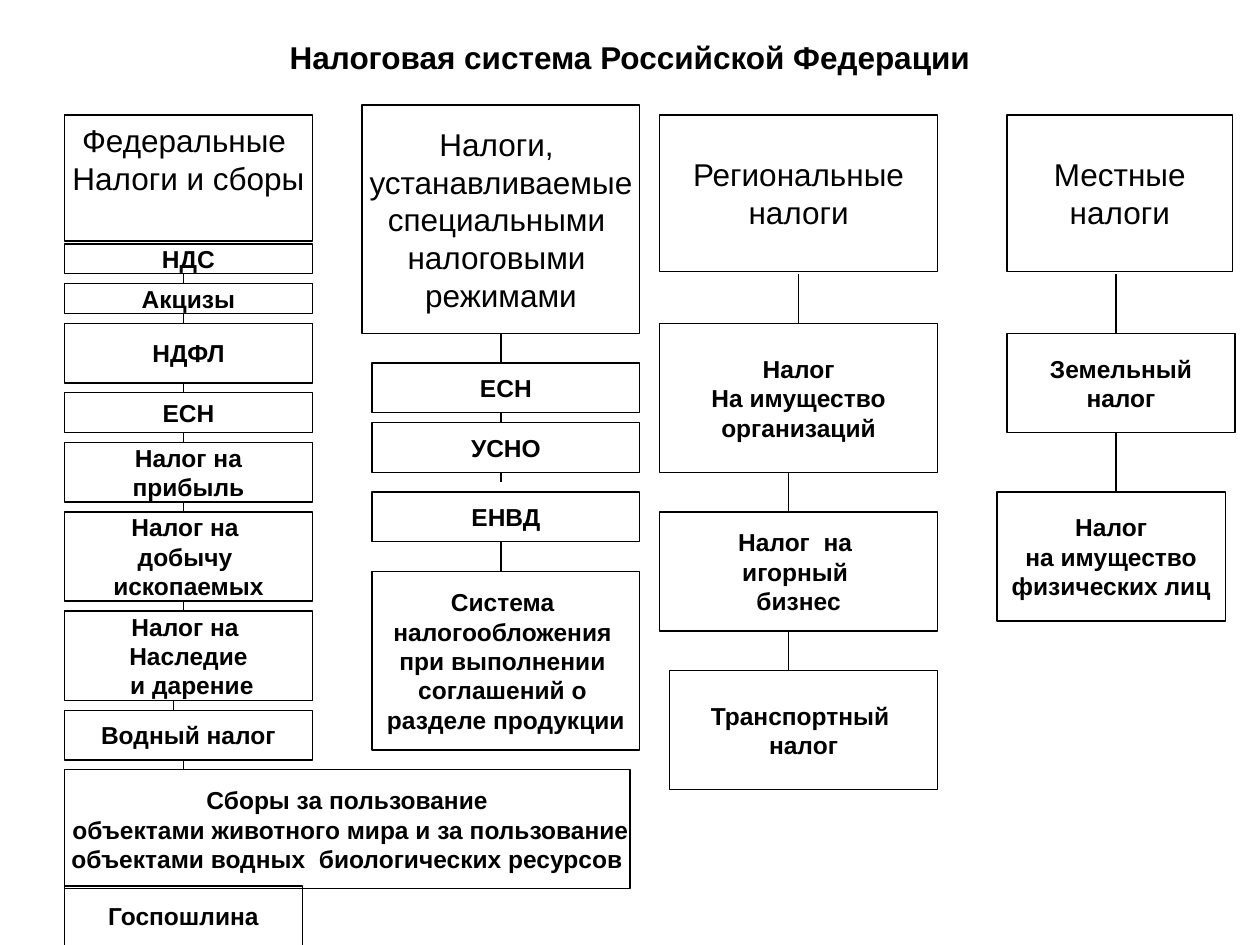
from dataclasses import dataclass

from lxml import etree
from pptx import Presentation
from pptx.dml.color import RGBColor
from pptx.enum.shapes import MSO_CONNECTOR, MSO_SHAPE
from pptx.enum.text import MSO_ANCHOR, PP_ALIGN
from pptx.oxml.ns import qn
from pptx.util import Cm, Pt

BLACK = RGBColor(0, 0, 0)
RECT = MSO_SHAPE.RECTANGLE
LINE = MSO_CONNECTOR.STRAIGHT
CENTER = PP_ALIGN.CENTER
MIDDLE = MSO_ANCHOR.MIDDLE
TOP = MSO_ANCHOR.TOP

BASE = {"name": "Arial"}
TITLE = {**BASE, "size": Pt(18), "bold": True}
HEAD = {**BASE, "size": Pt(18), "bold": False}
ITEM = {**BASE, "size": Pt(14), "bold": True}


@dataclass
class Part:
    text: str
    gap: float
    high: float
    dx: float = 0
    wide: float = 0
    link: float = 0
    start: float = 0
    stop: float = 0


def write(frame, text, style, anchor=MIDDLE):
    frame.text = text
    frame.vertical_anchor = anchor
    for para in frame.paragraphs:
        para.alignment = CENTER
        for run in para.runs:
            run.font.color.rgb = BLACK
            for key, value in style.items():
                setattr(run.font, key, value)


def add_box(slide, box, text, style, anchor=MIDDLE):
    shape = slide.shapes.add_shape(RECT, *map(Cm, box))
    shape.shadow.inherit = False
    shape.fill.background()
    shape.line.color.rgb = BLACK
    shape.line.width = Pt(0.75)
    shape.text_frame.word_wrap = False
    write(shape.text_frame, text, style, anchor)


def add_link(slide, x, top, end):
    line = slide.shapes.add_connector(LINE, Cm(x), Cm(top), Cm(x), Cm(end))
    line.line.color.rgb = BLACK
    line.line.width = Pt(0.75)
    etree.SubElement(line._element.spPr, qn("a:effectLst"))


def add_title(slide, box, text):
    title = slide.shapes.title
    for key, value in zip(("left", "top", "width", "height"), box):
        setattr(title, key, Cm(value))
    write(title.text_frame, text, TITLE)


def add_column(slide, box, head, parts, anchor=MIDDLE):
    left, top, wide, high = box
    add_box(slide, box, head, HEAD, anchor)
    end = top + high
    for part in parts:
        top = end + part.gap
        if part.link:
            add_link(slide, left + part.link, end + part.start, top - part.stop)
        add_box(slide, (left + part.dx, top, part.wide or wide, part.high),
                part.text, ITEM)
        end = top + part.high


FEDERAL = [
    Part("НДС", 0.06, 0.6),
    Part("Акцизы", 0.2, 0.6, link=2.4),
    Part("НДФЛ", 0.2, 1.2, link=2.4),
    Part("ЕСН", 0.2, 0.8, link=2.4),
    Part("Налог на\nприбыль", 0.2, 1.2, link=2.4),
    Part("Налог на \nдобычу \nископаемых", 0.2, 1.8, link=2.4),
    Part("Налог на \nНаследие\n и дарение", 0.2, 1.8, link=2.4),
    Part("Водный налог", 0.2, 1, link=2.2),
    Part("Сборы за пользование\n"
         " объектами животного мира и за пользование\n"
         "объектами водных  биологических ресурсов",
         0.2, 2.4, wide=11.4, link=2.4),
    Part("Госпошлина", -0.06, 1.2, wide=4.8),
]
SPECIAL = [
    Part("ЕСН", 0.6, 1, 0.2, 5.4, 2.8),
    Part("УСНО", 0.2, 1, 0.2, 5.4, 2.8),
    Part("ЕНВД", 0.4, 1, 0.2, 5.4, 2.8, stop=0.2),
    Part("Система \nналогообложения \nпри выполнении \n"
         "соглашений о \nразделе продукции", 0.6, 3.6, 0.2, 5.4, 2.8),
]
REGION = [
    Part("Налог\nНа имущество\nорганизаций", 1.05, 3, link=2.8, start=0.06),
    Part("Налог  на \nигорный \nбизнес", 0.8, 2.4, link=2.6),
    Part("Транспортный \nналог", 0.8, 2.4, 0.2, 5.4, 2.6),
]
LOCAL = [
    Part("Земельный\nналог", 1.25, 2, 0, 4.6, 2.2, start=0.06),
    Part("Налог\nна имущество\nфизических лиц", 1.2, 2.6, -0.2, 4.6, 2.2),
]


def main():
    deck = Presentation()
    deck.slide_width, deck.slide_height = Cm(25.4), Cm(19.05)
    slide = deck.slides.add_slide(deck.slide_layouts[5])
    add_title(slide, (1.27, 0.54, 22.86, 1.2),
              "Налоговая система Российской Федерации")
    add_column(slide, (1.3, 2.32, 5, 2.54),
               "Федеральные \nНалоги и сборы", FEDERAL, TOP)
    add_column(slide, (7.3, 2.12, 5.6, 4.6),
               "Налоги, \nустанавливаемые\nспециальными \nналоговыми \nрежимами",
               SPECIAL)
    add_column(slide, (13.3, 2.32, 5.6, 3.15), "Региональные\nналоги", REGION)
    add_column(slide, (20.3, 2.32, 4.55, 3.15), "Местные\nналоги", LOCAL)
    deck.save("out.pptx")


if __name__ == "__main__":
    main()
